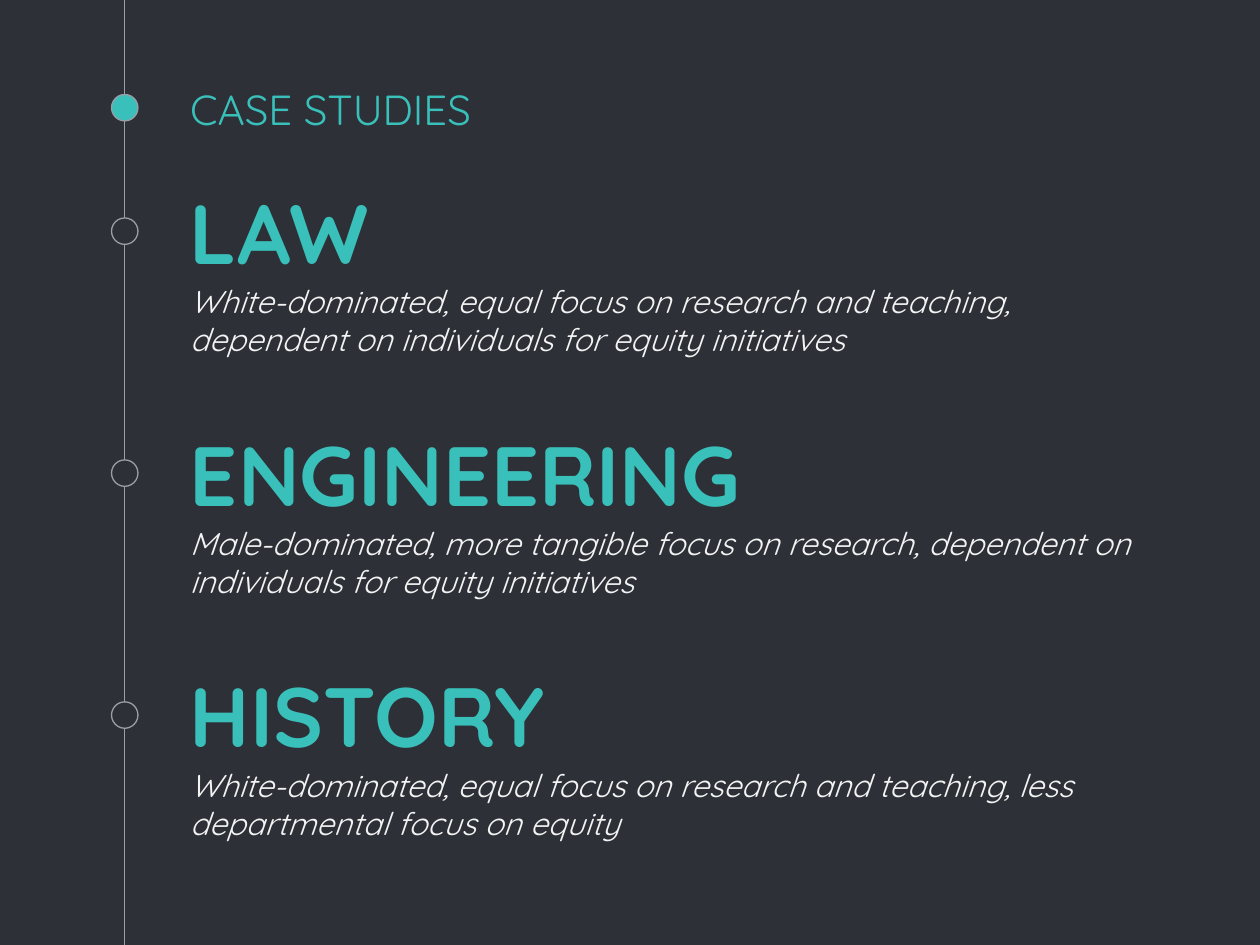
"""Build the case studies timeline slide."""
from dataclasses import dataclass

from lxml.etree import SubElement
from pptx import Presentation
from pptx.dml.color import RGBColor
from pptx.enum.shapes import MSO_CONNECTOR, MSO_SHAPE
from pptx.enum.text import MSO_ANCHOR, MSO_AUTO_SIZE, PP_ALIGN
from pptx.oxml.ns import qn
from pptx.util import Inches, Pt


@dataclass(frozen=True)
class Theme:
    background: RGBColor = RGBColor.from_string("2E3037")
    accent: RGBColor = RGBColor.from_string("39C0BA")
    body: RGBColor = RGBColor.from_string("F3F3F3")
    rail: RGBColor = RGBColor.from_string("999FA9")
    font: str = "Quicksand"
    heading_size: Pt = Pt(24)
    name_size: Pt = Pt(48)
    body_size: Pt = Pt(18)
    rail_width: Pt = Pt(0.75)


theme = Theme()


def write(holder, text, size, color, anchor=MSO_ANCHOR.TOP, bold=False, italic=False):
    frame = holder.text_frame
    frame.word_wrap = True
    frame.auto_size = MSO_AUTO_SIZE.NONE
    frame.vertical_anchor = anchor
    frame.margin_left = frame.margin_right = Inches(0.1)
    frame.margin_top = frame.margin_bottom = Inches(0.1)
    paragraph = frame.paragraphs[0]
    paragraph.alignment = PP_ALIGN.LEFT
    run = paragraph.add_run()
    run.text = text
    run.font.name = theme.font
    run.font.size = size
    run.font.color.rgb = color
    run.font.bold = bold
    run.font.italic = italic


def add_marker(top, color):
    marker = slide.shapes.add_shape(
        MSO_SHAPE.OVAL, rail_x - marker_size // 2, top, marker_size, marker_size)
    marker.shadow.inherit = False
    marker.fill.solid()
    marker.fill.fore_color.rgb = color
    marker.line.color.rgb = theme.rail
    marker.line.width = theme.rail_width


deck = Presentation()
deck.slide_width, deck.slide_height = Inches(10), Inches(7.5)
slide = deck.slides.add_slide(deck.slide_layouts[5])
slide.background.fill.solid()
slide.background.fill.fore_color.rgb = theme.background

rail_x, marker_size = Inches(0.99), Inches(0.21)
text_left, text_width = Inches(1.41), Inches(7.76)
first_top, pitch = Inches(1.02), Inches(1.92)

rail = slide.shapes.add_connector(
    MSO_CONNECTOR.STRAIGHT, rail_x, 0, rail_x, deck.slide_height)
rail.line.color.rgb = theme.rail
rail.line.width = theme.rail_width
SubElement(rail.element.spPr, qn("a:effectLst"))

heading = slide.shapes.title
heading.left, heading.top = text_left, Inches(0.56)
heading.width, heading.height = Inches(7.27), Inches(0.58)
write(heading, "CASE STUDIES", theme.heading_size, theme.accent)
add_marker(Inches(0.75), theme.accent)

case_studies = [
    ("LAW", "White-dominated, equal focus on research and teaching, "
            "dependent on individuals for equity initiatives"),
    ("ENGINEERING", "Male-dominated, more tangible focus on research, "
                    "dependent on individuals for equity initiatives"),
    ("HISTORY", "White-dominated, equal focus on research and teaching, "
                "less departmental focus on equity"),
]

for index, (discipline, summary) in enumerate(case_studies):
    top = first_top + index * pitch
    add_marker(top + Inches(0.71), theme.background)
    name = slide.shapes.add_textbox(text_left, top, text_width, Inches(1.31))
    write(name, discipline, theme.name_size, theme.accent, MSO_ANCHOR.BOTTOM, bold=True)
    description = slide.shapes.add_textbox(
        text_left, top + Inches(1.12), text_width, Inches(0.68))
    write(description, summary, theme.body_size, theme.body, italic=True)

deck.save("out.pptx")
